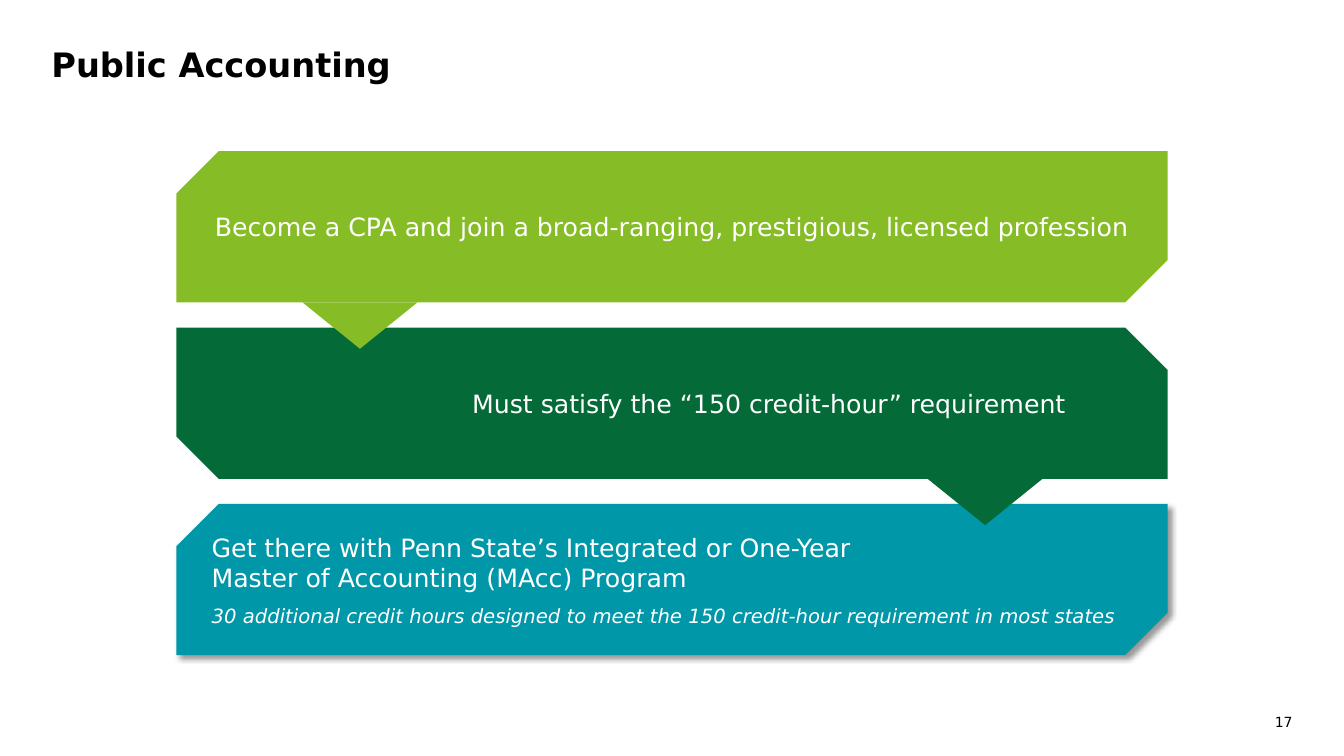
import lxml.etree
import pptx
import pptx.dml.color
import pptx.enum.shapes
import pptx.enum.text
import pptx.oxml.ns
import pptx.util

SHAPES = pptx.enum.shapes.MSO_SHAPE
ALIGN = pptx.enum.text.PP_ALIGN
ANCHOR = pptx.enum.text.MSO_ANCHOR
INCH = pptx.util.Inches

COLORS = {"lime": "86BC25", "green": "046A38", "teal": "0097A9",
          "white": "FFFFFF", "black": "000000"}
FONT = "DejaVu Sans"

# Bands: one column, three rows at an equal pitch
BAND_LEFT, BAND_TOP = 1.75, 1.5
BAND_WIDTH, BAND_HEIGHT, BAND_PITCH = 9.83, 1.5, 1.75
SNIP = 0.28
POINTER_WIDTH, POINTER_HEIGHT = 1.14, 0.46


def row_top(row):
    return BAND_TOP + row * BAND_PITCH


def rgb(name):
    return pptx.dml.color.RGBColor.from_string(COLORS[name])


def write(frame, text, size=18, color="white", bold=False, italic=False,
          align=ALIGN.LEFT, after=0, first=True):
    para = frame.paragraphs[0] if first else frame.add_paragraph()
    para.alignment = align
    para.space_after = pptx.util.Pt(after)
    span = para.add_run()
    span.text = text
    span.font.name = FONT
    span.font.size = pptx.util.Pt(size)
    span.font.bold = bold
    span.font.italic = italic
    span.font.color.rgb = rgb(color)


def add_text_box(page, left, top, width, height, inset=0.0, anchor=ANCHOR.TOP):
    box = page.shapes.add_textbox(INCH(left), INCH(top), INCH(width), INCH(height))
    frame = box.text_frame
    frame.word_wrap = True
    frame.vertical_anchor = anchor
    frame.margin_left = frame.margin_right = INCH(inset)
    frame.margin_top = frame.margin_bottom = INCH(inset)
    return frame


def add_filled(page, kind, left, top, width, height, color):
    shape = page.shapes.add_shape(kind, INCH(left), INCH(top), INCH(width), INCH(height))
    shape.shadow.inherit = False
    shape.fill.solid()
    shape.fill.fore_color.rgb = rgb(color)
    shape.line.fill.background()
    return shape


def add_band(page, row, color):
    band = add_filled(page, SHAPES.SNIP_2_DIAG_RECTANGLE, BAND_LEFT, row_top(row),
                      BAND_WIDTH, BAND_HEIGHT, color)
    # The snipped corners switch diagonal on every row
    band.adjustments[row % 2] = SNIP
    band.adjustments[1 - row % 2] = 0
    return band


def add_pointer(page, row, left, color):
    pointer = add_filled(page, SHAPES.ISOSCELES_TRIANGLE, left, row_top(row) + BAND_HEIGHT,
                         POINTER_WIDTH, POINTER_HEIGHT, color)
    pointer.rotation = 180


def add_shadow(shape, blur, distance, angle, opacity):
    qn = pptx.oxml.ns.qn
    effects = shape.element.spPr.find(qn("a:effectLst"))
    shadow = lxml.etree.SubElement(
        effects, qn("a:outerShdw"), blurRad=str(pptx.util.Pt(blur)),
        dist=str(pptx.util.Pt(distance)), dir=str(angle * 60000),
        algn="tl", rotWithShape="0")
    shade = lxml.etree.SubElement(shadow, qn("a:srgbClr"), val=COLORS["black"])
    lxml.etree.SubElement(shade, qn("a:alpha"), val=str(opacity * 1000))


def main():
    deck = pptx.Presentation()
    deck.slide_width, deck.slide_height = INCH(13.33), INCH(7.5)
    page = deck.slides.add_slide(deck.slide_layouts[6])

    # Title and page number
    write(add_text_box(page, 0.51, 0.44, 12.31, 0.76), "Public Accounting",
          size=24, color="black", bold=True)
    write(add_text_box(page, 12.48, 7.08, 0.34, 0.17), "17",
          size=10, color="black", align=ALIGN.RIGHT)

    # Bands from the bottom up, so that each pointer overlaps the band below
    program_band = add_band(page, 2, "teal")
    add_shadow(program_band, blur=4, distance=3, angle=45, opacity=40)
    add_pointer(page, 1, 9.2, "green")
    add_band(page, 1, "green")
    add_pointer(page, 0, 3, "lime")
    career_band = add_band(page, 0, "lime")

    # Band texts
    career = career_band.text_frame
    career.word_wrap = True
    career.vertical_anchor = ANCHOR.MIDDLE
    write(career, "Become a CPA and join a broad-ranging, prestigious, licensed profession",
          align=ALIGN.CENTER)

    requirement = add_text_box(page, BAND_LEFT, row_top(1), 8.92, BAND_HEIGHT,
                               inset=0.1, anchor=ANCHOR.MIDDLE)
    write(requirement, "Must satisfy the “150 credit-hour” requirement", align=ALIGN.RIGHT)

    program = add_text_box(page, BAND_LEFT + 0.25, row_top(2), BAND_WIDTH - 0.25, BAND_HEIGHT,
                           inset=0.1, anchor=ANCHOR.MIDDLE)
    write(program, "Get there with Penn State’s Integrated or One-Year")
    write(program, "Master of Accounting (MAcc) Program", after=8, first=False)
    write(program, "30 additional credit hours designed to meet the 150 credit-hour "
          "requirement in most states", size=14, italic=True, first=False)

    deck.save("out.pptx")


if __name__ == "__main__":
    main()
